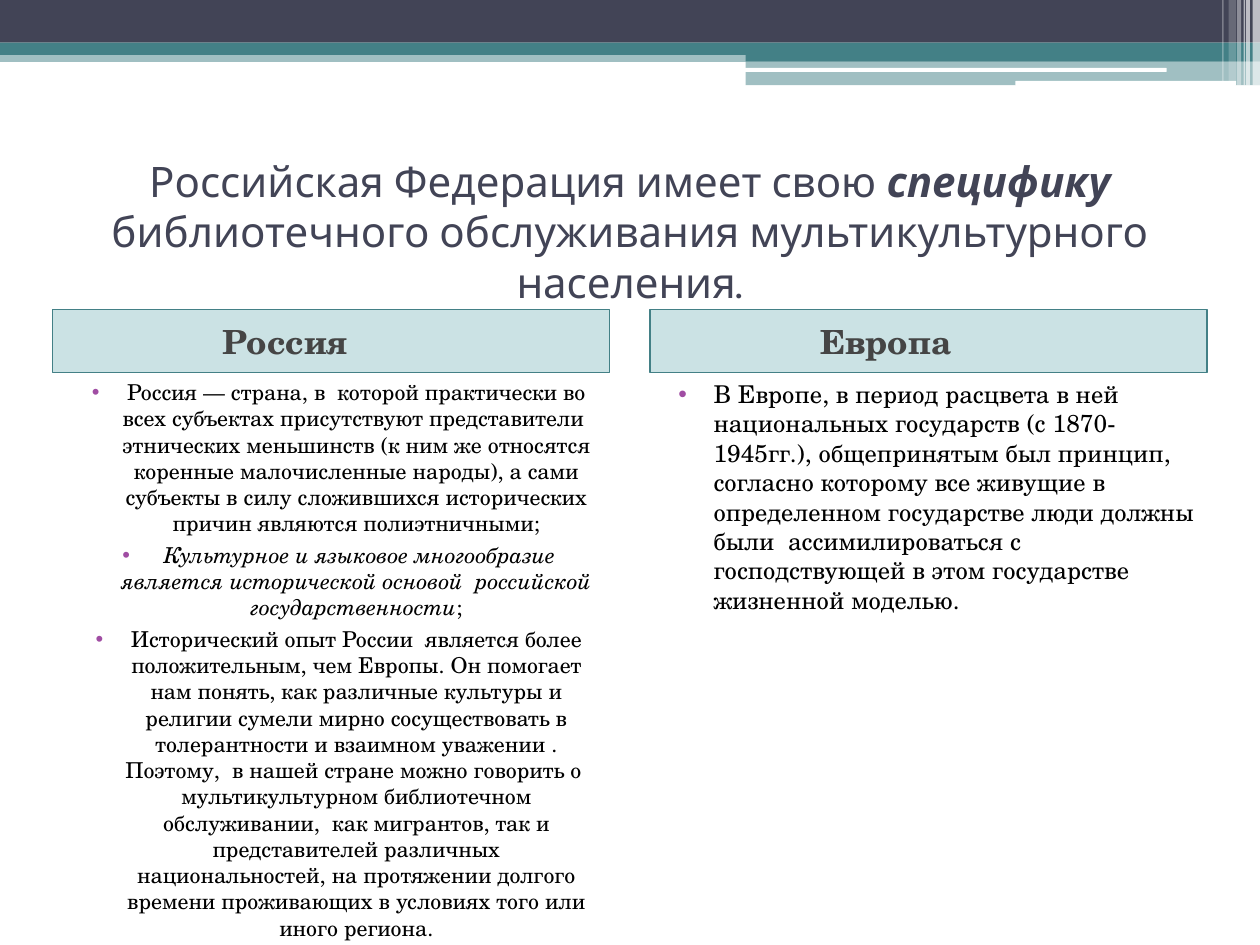
from lxml.etree import SubElement
from pptx import Presentation
from pptx.dml.color import RGBColor
from pptx.enum.shapes import MSO_SHAPE
from pptx.enum.text import MSO_ANCHOR, MSO_AUTO_SIZE, PP_ALIGN
from pptx.oxml.ns import qn
from pptx.util import Cm, Pt

COLORS = {
    "navy": "424456", "teal": "438086", "heading_fill": "328E97",
    "heading_text": "454545", "bullet": "A04DA3", "white": "FFFFFF", "black": "000000",
}
SERIF = "TeX Gyre Schola"


def fill_shape(shape, color, opacity=100):
    shape.fill.solid()
    shape.fill.fore_color.rgb = RGBColor.from_string(COLORS[color])
    if opacity < 100:
        color_element = shape.fill._xPr.find(qn("a:solidFill"))[0]
        SubElement(color_element, qn("a:alpha"), val=str(opacity * 1000))


def add_runs(paragraph, runs, font, size, color):
    for text, bold, italic in runs:
        run = paragraph.add_run()
        run.text = text
        run.font.name = font
        run.font.size = Pt(size)
        run.font.bold = bold
        run.font.italic = italic
        run.font.color.rgb = RGBColor.from_string(COLORS[color])


presentation = Presentation()
presentation.slide_width = Cm(25.4)
presentation.slide_height = Cm(19.05)
slide = presentation.slides.add_slide(presentation.slide_layouts[4])
title, left_heading, left_body, right_heading, right_body = [
    slide.placeholders[index] for index in range(5)
]

bands = [
    (0, 1.02, 25.4, 0.23, "teal", 50),
    (0, 0, 25.4, 0.86, "navy", 100),
    (0, 0.86, 25.4, 0.25, "teal", 100),
    (15.03, 0.99, 10.37, 0.24, "teal", 100),
    (15.03, 1.23, 10.37, 0.49, "teal", 50),
]
highlights = [(15.01, 1.37, 8.51, 0.08), (20.47, 1.63, 4.45, 0.1)]
stripes = [
    (25.25, 0.15, 1.73, 65), (25.12, 0.08, 1.73, 65), (25.07, 0.03, 1.73, 60),
    (24.94, 0.08, 1.73, 40), (24.77, 0.15, 1.63, 20), (24.64, 0.03, 1.63, 30),
]
decorations = [(MSO_SHAPE.RECTANGLE, *band) for band in bands]
decorations += [(MSO_SHAPE.ROUNDED_RECTANGLE, *box, "white", 100) for box in highlights]
decorations += [
    (MSO_SHAPE.RECTANGLE, left, 0, width, height, "white", opacity)
    for left, width, height, opacity in stripes
]
for preset, left, top, width, height, color, opacity in decorations:
    shape = slide.shapes.add_shape(preset, Cm(left), Cm(top), Cm(width), Cm(height))
    shape.shadow.inherit = False
    shape.line.fill.background()
    fill_shape(shape, color, opacity)

title.left, title.top, title.width, title.height = Cm(1.06), Cm(3.18), Cm(23.28), Cm(2.96)
title.text_frame.auto_size = MSO_AUTO_SIZE.NONE
title.text_frame.vertical_anchor = MSO_ANCHOR.MIDDLE
paragraph = title.text_frame.paragraphs[0]
paragraph.alignment = PP_ALIGN.CENTER
add_runs(paragraph, [
    ("Российская Федерация имеет свою ", False, False),
    ("специфику ", True, True),
    ("библиотечного обслуживания мультикультурного населения.", False, False),
], "Karla", 24, "navy")

russia_points = [
    [("Россия — страна, в  которой практически во всех субъектах присутствуют "
      "представители  этнических меньшинств (к ним же относятся коренные малочисленные "
      "народы), а сами субъекты в силу сложившихся исторических причин являются "
      "полиэтничными;", False, False)],
    [(" ", False, False),
     ("Культурное и языковое многообразие является исторической основой  российской "
      "государственности", False, True),
     (";", False, False)],
    [("Исторический опыт России  является более положительным, чем Европы. Он помогает "
      "нам понять, как различные культуры и религии сумели мирно сосуществовать в "
      "толерантности и взаимном уважении . Поэтому,  в нашей стране можно говорить о  "
      "мультикультурном библиотечном обслуживании,  как мигрантов, так и представителей "
      "различных национальностей, на протяжении долгого времени проживающих в условиях "
      "того или иного региона.", False, False)],
]
europe_points = [
    [("В Европе, в период расцвета в ней  национальных государств (с 1870-1945гг.), "
      "общепринятым был принцип, согласно которому все живущие в определенном государстве "
      "люди должны были  ассимилироваться с господствующей в этом государстве жизненной "
      "моделью.", False, False)],
]
columns = [
    (1.06, left_heading, "Россия", left_body, russia_points, 12.5, PP_ALIGN.CENTER),
    (13.11, right_heading, "Европа", right_body, europe_points, 14, PP_ALIGN.LEFT),
]
for left, heading, name, body, points, size, alignment in columns:
    heading.left, heading.top, heading.width, heading.height = Cm(left), Cm(6.24), Cm(11.23), Cm(1.27)
    fill_shape(heading, "heading_fill", 25)
    heading.line.color.rgb = RGBColor.from_string(COLORS["teal"])
    heading.line.width = Pt(1)
    heading.text_frame.auto_size = MSO_AUTO_SIZE.NONE
    heading.text_frame.vertical_anchor = MSO_ANCHOR.MIDDLE
    paragraph = heading.text_frame.paragraphs[0]
    paragraph.space_before = Pt(3)
    properties = paragraph._p.get_or_add_pPr()
    properties.set("marL", str(Cm(3.18)))
    properties.set("indent", "0")
    add_runs(paragraph, [(name, True, False)], SERIF, 19, "heading_text")

    body.left, body.top, body.width, body.height = Cm(left), Cm(7.51), Cm(11.23), Cm(10.8)
    frame = body.text_frame
    frame.auto_size = MSO_AUTO_SIZE.NONE
    for index, runs in enumerate(points):
        paragraph = frame.add_paragraph() if index else frame.paragraphs[0]
        paragraph.alignment = alignment
        paragraph.space_before = Pt(3)
        properties = paragraph._p.get_or_add_pPr()
        properties.set("marL", str(Cm(1.02)))
        properties.set("indent", str(Cm(-0.71)))
        bullet_color = SubElement(properties, qn("a:buClr"))
        SubElement(bullet_color, qn("a:srgbClr"), val=COLORS["bullet"])
        SubElement(properties, qn("a:buChar"), char="•")
        add_runs(paragraph, runs, SERIF, size, "black")

presentation.save("out.pptx")
